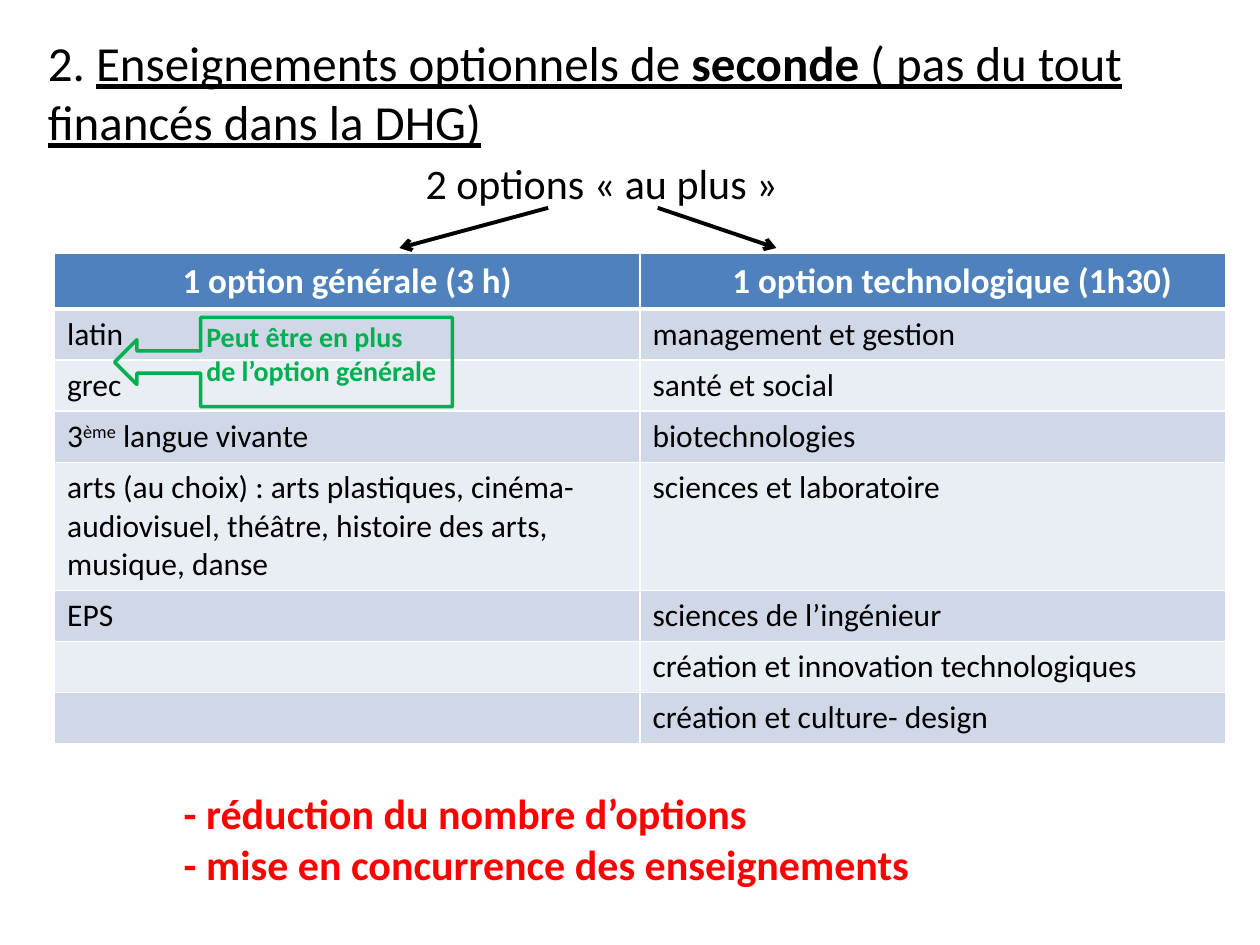
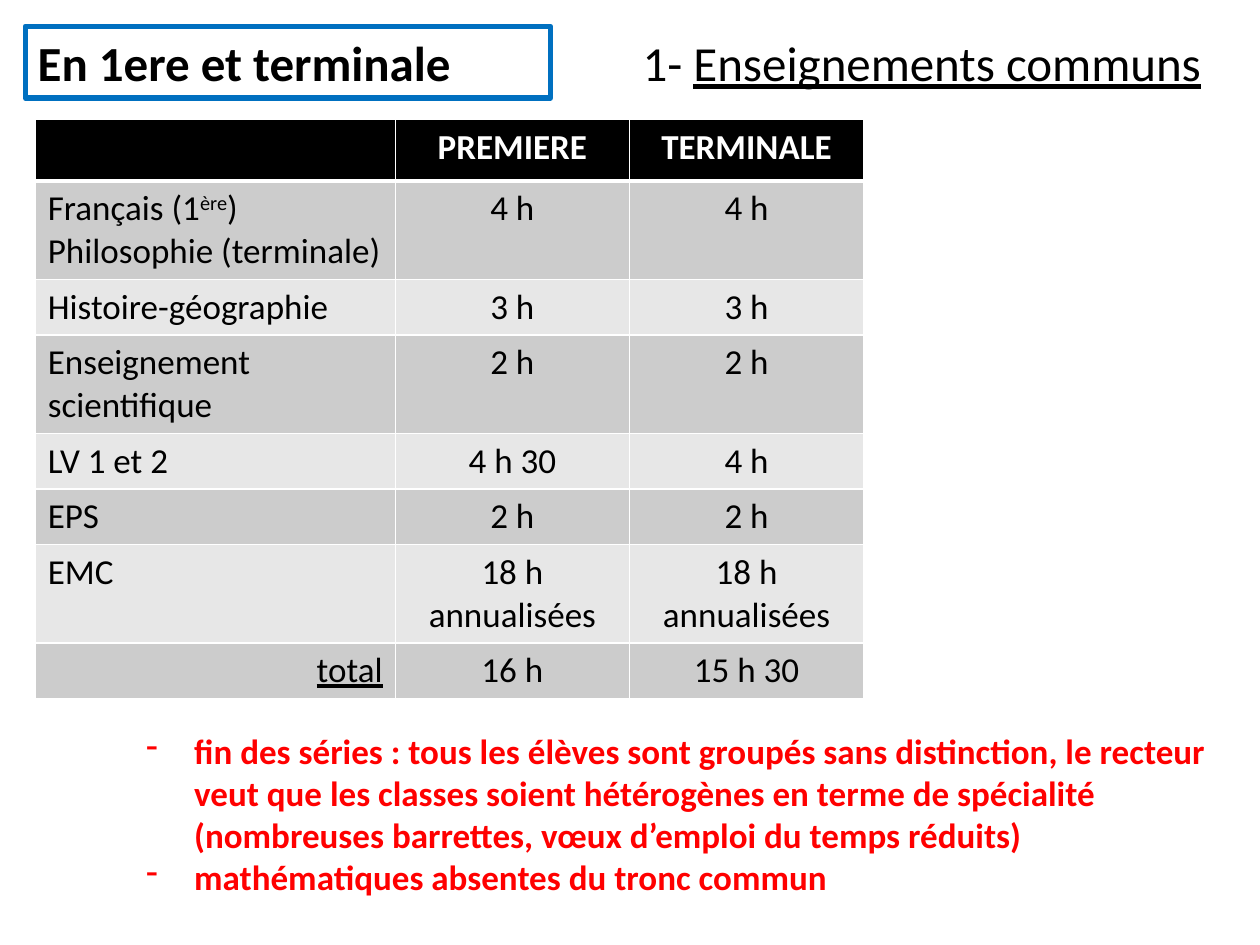
"""Build two slides on optional and common school subjects."""
from lxml.etree import SubElement
from pptx import Presentation
from pptx.dml.color import RGBColor
from pptx.enum.shapes import MSO_CONNECTOR as Line, MSO_SHAPE as Shape
from pptx.enum.text import MSO_ANCHOR as Anchor, MSO_AUTO_SIZE as AutoSize, PP_ALIGN as Align
from pptx.oxml.ns import qn
from pptx.util import Cm, Pt

FONT = "Calibri"
COLORS = {"text": "000000", "white": "FFFFFF", "alert": "FF0000", "note": "00B050", "frame": "0070C0"}
BLUE_TABLE = {"header": "4F81BD", "bands": ("D0D8E8", "E9EDF4")}
GREY_TABLE = {"header": "000000", "bands": ("CCCCCC", "E7E7E7")}

OPTIONS_TITLE = [[("2. ", ""), ("Enseignements optionnels de ", "u"), ("seconde ", "bu"),
                  ("( pas du tout financés dans la DHG)", "u")]]
OPTIONS_LIMIT = ["2 options « au plus »"]
OPTIONS = [
    (["1 option générale (3 h)"], ["1 option technologique (1h30)"]),
    (["latin"], ["management et gestion"]),
    (["grec"], ["santé et social"]),
    ([[("3", ""), ("ème", "^"), (" langue vivante", "")]], ["biotechnologies"]),
    (["arts (au choix) : arts plastiques, cinéma-audiovisuel, théâtre, histoire des arts, musique, danse"],
     ["sciences et laboratoire"]),
    (["EPS"], ["sciences de l’ingénieur"]),
    ([], ["création et innovation technologiques"]),
    ([], ["création et culture- design"]),
]
OPTIONS_HEIGHTS = [1.08, 1.03, 1.03, 1.03, 2.58, 1.03, 1.03, 1.03]
LATIN_GREEK_NOTE = ["Peut être en plus", "de l’option générale"]
OPTIONS_EFFECTS = ["- réduction du nombre d’options", "- mise en concurrence des enseignements"]
LIMIT_ARROWS = [((11.05, 4.19), (8.05, 5.0)), ((13.26, 4.19), (15.65, 5.0))]

LEVELS = ["En 1ere et terminale"]
COMMON_TITLE = [[("1- ", ""), ("Enseignements communs", "u")]]
COMMON = [
    ([], ["PREMIERE"], ["TERMINALE"]),
    ([[("Français (1", ""), ("ère", "^"), (")", "")], "Philosophie (terminale)"], ["4 h"], ["4 h"]),
    (["Histoire-géographie"], ["3 h"], ["3 h"]),
    (["Enseignement scientifique"], ["2 h"], ["2 h"]),
    (["LV 1 et 2"], ["4 h 30"], ["4 h"]),
    (["EPS"], ["2 h"], ["2 h"]),
    (["EMC"], ["18 h annualisées"], ["18 h annualisées"]),
    ([[("total", "u")]], ["16 h"], ["15 h 30"]),
]
COMMON_HEIGHTS = [1.24, 1.96, 1.12, 1.95, 1.12, 1.12, 1.95, 1.12]
COMMON_EFFECTS = [
    "fin des séries : tous les élèves sont groupés sans distinction, le recteur veut que les classes "
    "soient hétérogènes en terme de spécialité (nombreuses barrettes, vœux d’emploi du temps réduits)",
    "mathématiques absentes du tronc commun",
]


def rgb(color):
    return RGBColor.from_string(COLORS.get(color, color))


def write(frame, paragraphs, size, color="text", bold=False, align=Align.LEFT):
    for index, content in enumerate(paragraphs):
        paragraph = frame.add_paragraph() if index else frame.paragraphs[0]
        paragraph.alignment = align
        paragraph.space_before = Pt(0)
        for words, style in [(content, "")] if isinstance(content, str) else content:
            run = paragraph.add_run()
            run.text = words
            font = run.font
            font.name, font.size, font.color.rgb = FONT, Pt(size), rgb(color)
            font.bold = bold or "b" in style
            font.underline = "u" in style
            if "^" in style:
                run._r.get_or_add_rPr().set("baseline", "30000")


def place(part, left, top, width, height):
    part.left, part.top, part.width, part.height = map(Cm, (left, top, width, height))
    frame = part.text_frame
    frame.word_wrap, frame.auto_size, frame.vertical_anchor = True, AutoSize.NONE, Anchor.TOP
    return frame


def add_list(slide, items, box, size, dash):
    frame = place(slide.placeholders[1], *box)
    write(frame, items, size, "alert", bold=True)
    for paragraph in frame.paragraphs:
        properties = paragraph._p.get_or_add_pPr()
        indent = Cm(0.97) if dash else 0
        properties.set("marL", str(indent))
        properties.set("indent", str(-indent))
        if dash:
            SubElement(properties, qn("a:buFontTx"))
            SubElement(properties, qn("a:buChar"), char="-")
        else:
            SubElement(properties, qn("a:buNone"))


def add_text(slide, paragraphs, box, size, **style):
    left, top, width, height = box
    note = slide.shapes.add_textbox(0, 0, Cm(width), Cm(height))
    write(place(note, *box), paragraphs, size, **style)


def add_outline(slide, kind, box, color, weight):
    outline = slide.shapes.add_shape(kind, *map(Cm, box))
    outline.shadow.inherit = False
    outline.fill.background()
    outline.line.color.rgb = rgb(color)
    outline.line.width = Pt(weight)
    return outline


def add_arrow(slide, start, end):
    arrow = slide.shapes.add_connector(Line.STRAIGHT, *map(Cm, start + end))
    arrow.line.color.rgb = rgb("text")
    arrow.line.width = Pt(2.25)
    SubElement(arrow.line._get_or_add_ln(), qn("a:tailEnd"), type="arrow")
    SubElement(arrow._element.spPr, qn("a:effectLst"))


def add_borders(cell, row):
    properties = cell._tc.get_or_add_tcPr()
    weights = {"L": 1, "R": 1, "T": 3 if row == 1 else 1, "B": 1 if row else 3}
    for side, weight in weights.items():
        border = SubElement(properties, qn(f"a:ln{side}"), w=str(Pt(weight)))
        SubElement(SubElement(border, qn("a:solidFill")), qn("a:srgbClr"), val=COLORS["white"])


def add_grid(slide, rows, corner, widths, heights, palette, body_size, body_align):
    size = map(Cm, (*corner, sum(widths), sum(heights)))
    table = slide.shapes.add_table(len(rows), len(widths), *size).table
    for column, width in zip(table.columns, widths):
        column.width = Cm(width)
    for r, (row, height) in enumerate(zip(rows, heights)):
        table.rows[r].height = Cm(height)
        for c, content in enumerate(row):
            cell = table.cell(r, c)
            add_borders(cell, r)
            cell.fill.solid()
            cell.fill.fore_color.rgb = rgb(palette["bands"][(r - 1) % 2] if r else palette["header"])
            if r:
                write(cell.text_frame, content, body_size, align=body_align[c])
            else:
                write(cell.text_frame, content, 20, "white", bold=True, align=Align.CENTER)
    return table


def add_titled_slide(deck, title, box):
    slide = deck.slides.add_slide(deck.slide_layouts[1])
    write(place(slide.shapes.title, *box), title, 28)
    return slide


def build_options(deck):
    slide = add_titled_slide(deck, OPTIONS_TITLE, (0.71, 0.53, 22.6, 2.65))
    table = add_grid(slide, OPTIONS, (1.1, 5.11), [11.8] * 2, OPTIONS_HEIGHTS,
                     BLUE_TABLE, 18, [Align.LEFT] * 2)
    table.cell(0, 1).margin_left = Cm(1.05)
    add_text(slide, OPTIONS_LIMIT, (8.33, 3.05, 9, 1.27), 24)
    for start, end in LIMIT_ARROWS:
        add_arrow(slide, start, end)
    add_text(slide, LATIN_GREEK_NOTE, (3.91, 6.32, 5.26, 1.63), 16, color="note", bold=True)
    callout = add_outline(slide, Shape.LEFT_ARROW_CALLOUT, (2.31, 6.4, 6.81, 1.8), "note", 2)
    callout.adjustments[3] = 0.745
    add_list(slide, OPTIONS_EFFECTS, (3.45, 15.75, 20.04, 2.31), 24, dash=False)


def build_common(deck):
    slide = add_titled_slide(deck, COMMON_TITLE, (12.7, 0.53, 11.99, 1.45))
    add_grid(slide, COMMON, (0.71, 2.41), [7.26, 4.72, 4.72], COMMON_HEIGHTS,
             GREY_TABLE, 20, [Align.LEFT, Align.CENTER, Align.CENTER]).cell(
                 len(COMMON) - 1, 0).text_frame.paragraphs[0].alignment = Align.RIGHT
    add_list(slide, COMMON_EFFECTS, (2.69, 14.58, 22.38, 3.68), 20, dash=True)
    levels = add_outline(slide, Shape.RECTANGLE, (0.51, 0.53, 10.59, 1.45), "frame", 3)
    write(levels.text_frame, LEVELS, 28, bold=True)


def main():
    deck = Presentation()
    deck.slide_width, deck.slide_height = Cm(25.4), Cm(19.05)
    build_options(deck)
    build_common(deck)
    deck.save("out.pptx")


if __name__ == "__main__":
    main()
